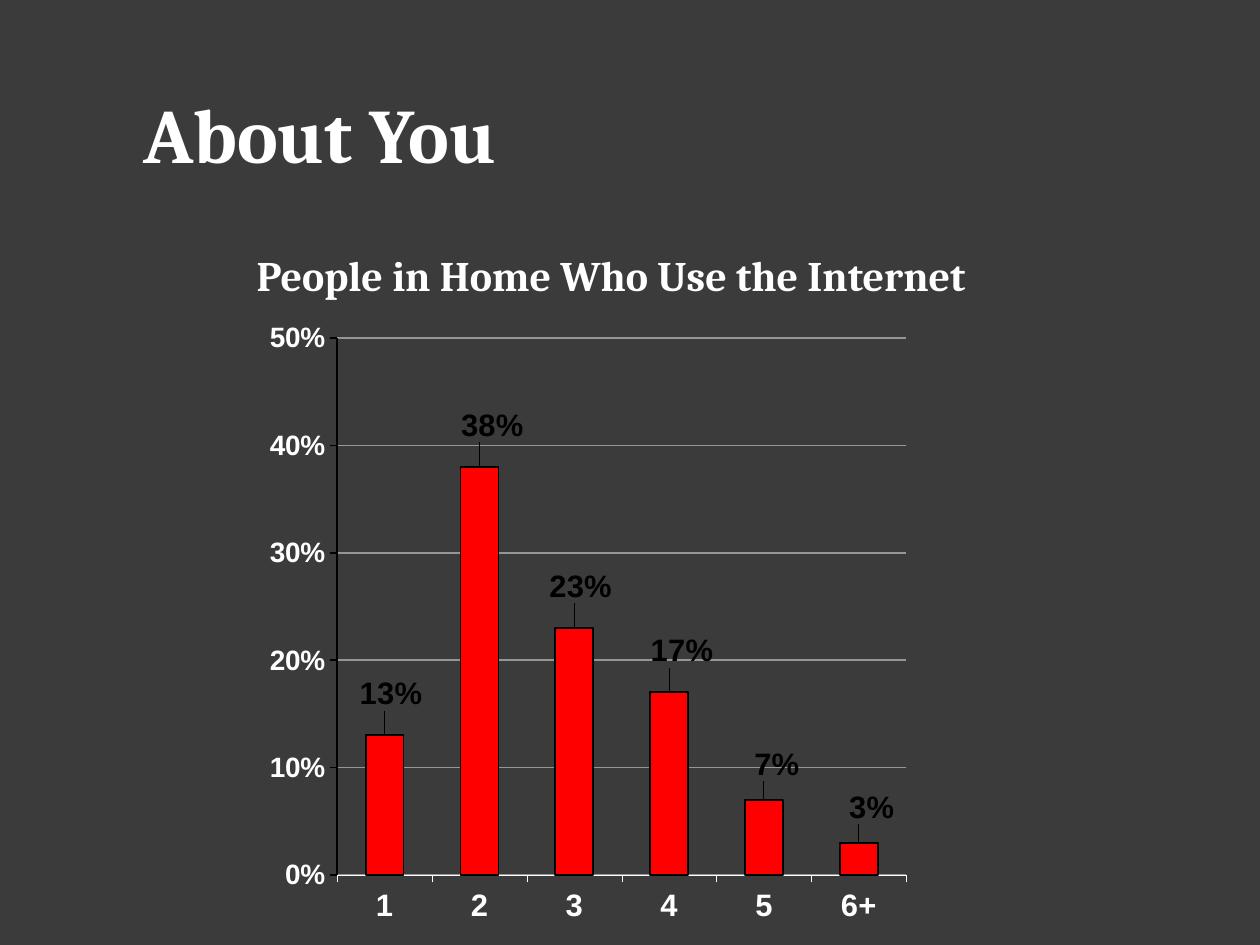
import pptx
import pptx.chart.data
import pptx.dml.color
import pptx.enum.chart
import pptx.enum.text
import pptx.oxml
import pptx.oxml.ns
import pptx.util

RGB = pptx.dml.color.RGBColor
WHITE = RGB(0xFF, 0xFF, 0xFF)
BLACK = RGB(0, 0, 0)
RED = RGB(0xFF, 0, 0)
GRAY = RGB(0x96, 0x96, 0x96)
DARK = RGB(0x3B, 0x3B, 0x3B)
WIDE, HIGH = 10, 7.5

# Category, share of people, label shift (shares of the chart's size)
DATA = [
    ("1", 0.13, 0.01, -0.03),
    ("2", 0.38, 0.02, -0.03),
    ("3", 0.23, 0.01, -0.03),
    ("4", 0.17, 0.02, -0.03),
    ("5", 0.07, 0.02, -0.02),
    ("6+", 0.03, 0.02, -0.02),
]


def place(box):
    """Turn a box in inches into lengths."""
    return [pptx.util.Inches(n) for n in box]


def style(font, size, color, name="Arial"):
    font.size = pptx.util.Pt(size)
    font.bold = True
    font.name = name
    font.color.rgb = color


def stroke(line, color, width):
    line.color.rgb = color
    line.width = pptx.util.Pt(width)


def layout(**parts):
    """Make a manual chart layout from its parts."""
    space = pptx.oxml.ns.nsdecls("c")
    body = "".join(f'<c:{key} val="{val}"/>' for key, val in parts.items())
    return pptx.oxml.parse_xml(
        f"<c:layout {space}><c:manualLayout>{body}</c:manualLayout></c:layout>")


def write(shape, text, size, align):
    frame = shape.text_frame
    frame.text = text
    frame.word_wrap = True
    frame.auto_size = pptx.enum.text.MSO_AUTO_SIZE.NONE
    frame.vertical_anchor = pptx.enum.text.MSO_ANCHOR.TOP
    para = frame.paragraphs[0]
    para.alignment = align
    style(para.font, size, WHITE, "Cambria")


def add_title(slide, box):
    title = slide.shapes.title
    title.left, title.top, title.width, title.height = place(box)
    write(title, "About You", 44, pptx.enum.text.PP_ALIGN.LEFT)


def add_head(slide, box):
    head = slide.shapes.add_textbox(*place(box))
    write(head, "People in Home Who Use the Internet", 24,
          pptx.enum.text.PP_ALIGN.CENTER)


def set_axes(chart):
    kinds = pptx.enum.chart
    cat = chart.category_axis
    cat.tick_label_position = kinds.XL_TICK_LABEL_POSITION.LOW
    cat.has_major_gridlines = False
    style(cat.tick_labels.font, 17.7, WHITE)
    stroke(cat.format.line, WHITE, 0.25)

    val = chart.value_axis
    val.minimum_scale, val.maximum_scale, val.major_unit = 0, 0.5, 0.1
    val.tick_labels.number_format = "0%"
    val.tick_labels.number_format_is_linked = False
    style(val.tick_labels.font, 16, WHITE)
    stroke(val.format.line, BLACK, 1)
    val.has_major_gridlines = True
    stroke(val.major_gridlines.format.line, GRAY, 1)
    for axis in (cat, val):
        axis.major_tick_mark = kinds.XL_TICK_MARK.OUTSIDE
        axis.minor_tick_mark = kinds.XL_TICK_MARK.NONE


def set_labels(plot, bars):
    spot = pptx.enum.chart.XL_LABEL_POSITION.OUTSIDE_END
    labels = bars.data_labels
    labels.show_value = True
    labels.number_format = "0%"
    labels.number_format_is_linked = False
    labels.position = spot
    style(labels.font, 17.7, BLACK)
    # Shift each label from its usual spot above the bar
    for i, (_, _, x, y) in enumerate(DATA):
        label = bars.points[i].data_label
        style(label.font, 17.7, BLACK)
        label.position = spot
    tag = pptx.oxml.ns.qn("c:dLbl")
    for item, (_, _, x, y) in zip(labels._element.findall(tag), DATA):
        item.insert(1, layout(x=x, y=y))


def add_bars(slide, box):
    data = pptx.chart.data.CategoryChartData(number_format="0%")
    data.categories = [row[0] for row in DATA]
    data.add_series("Series 1", [row[1] for row in DATA])
    kind = pptx.enum.chart.XL_CHART_TYPE.COLUMN_CLUSTERED
    chart = slide.shapes.add_chart(kind, *place(box), data).chart
    chart.has_legend = False
    chart.has_title = False
    style(chart.font, 17.4, WHITE, "Times New Roman")
    set_axes(chart)

    # Bars and their labels
    plot = chart.plots[0]
    plot.gap_width = 150
    plot.vary_by_categories = False
    bars = plot.series[0]
    bars.format.fill.solid()
    bars.format.fill.fore_color.rgb = RED
    stroke(bars.format.line, BLACK, 1)
    set_labels(plot, bars)

    # Fixed inner plot area
    area = chart._chartSpace.chart.plotArea
    for old in area.findall(pptx.oxml.ns.qn("c:layout")):
        area.remove(old)
    area.insert(0, layout(layoutTarget="inner", xMode="edge", yMode="edge",
                          x=0.127, y=0.061, w=0.873, h=0.829))


def main():
    deck = pptx.Presentation()
    deck.slide_width = pptx.util.Inches(WIDE)
    deck.slide_height = pptx.util.Inches(HIGH)
    slide = deck.slides.add_slide(deck.slide_layouts[5])
    fill = slide.background.fill
    fill.solid()
    fill.fore_color.rgb = DARK
    add_title(slide, (1.04, 0.64, 5.58, 0.83))
    add_head(slide, (1.76, 1.93, 6.18, 0.5))
    add_bars(slide, (2.02, 2.37, 5.18, 5.14))
    deck.save("out.pptx")


if __name__ == "__main__":
    main()
